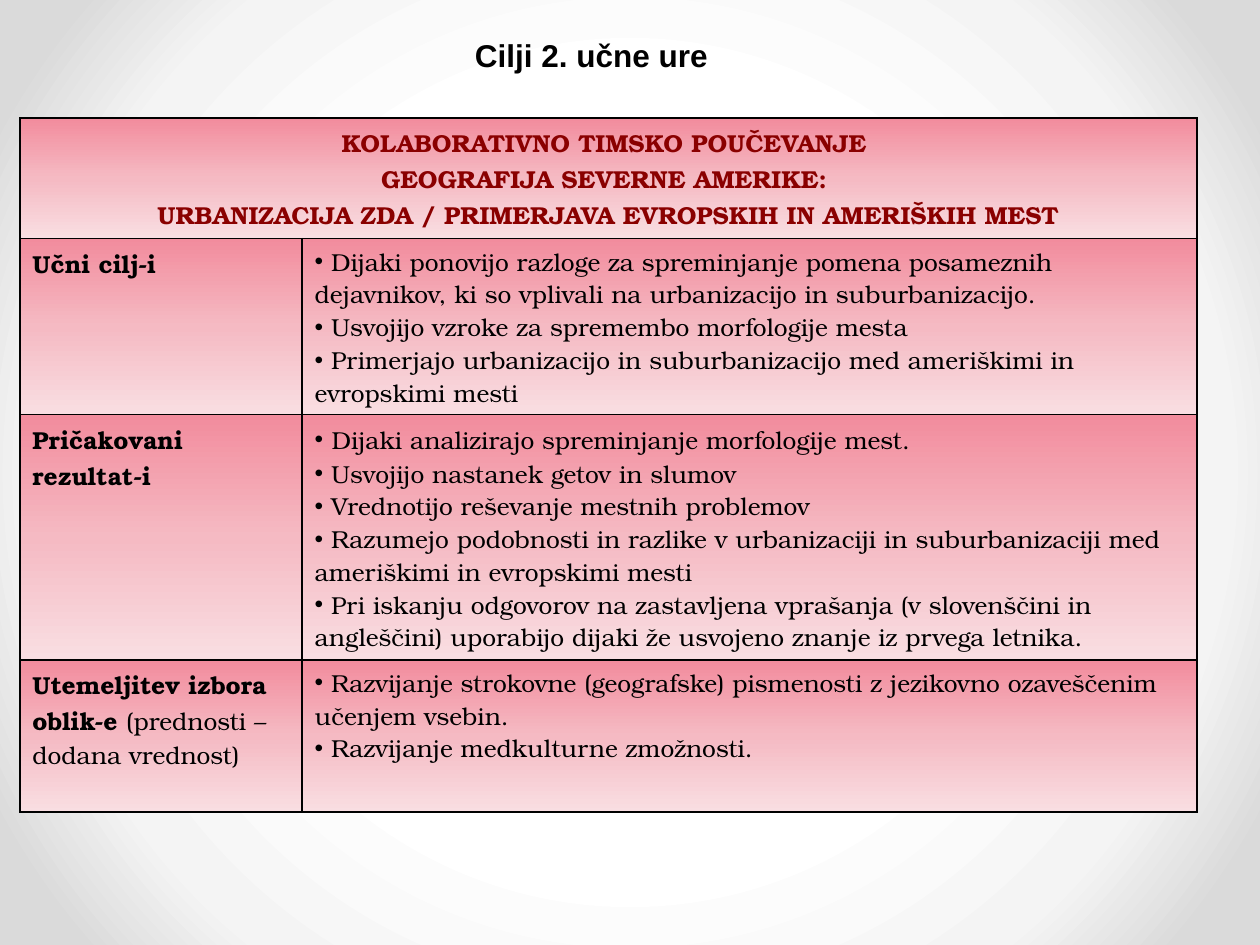
from lxml import etree
from pptx import Presentation
from pptx import util as u
from pptx.dml import color
from pptx.enum import text
from pptx.oxml import ns

HEADING = [
    "KOLABORATIVNO TIMSKO POUČEVANJE ",
    "GEOGRAFIJA SEVERNE AMERIKE: ",
    "URBANIZACIJA ZDA / PRIMERJAVA EVROPSKIH IN AMERIŠKIH MEST",
]
GOALS = [
    ([("Učni cilj-i", True)],
     [[(" Dijaki ponovijo razloge za spreminjanje pomena posameznih dejavnikov, "
        "ki so vplivali na urbanizacijo in suburbanizacijo.", False)],
      [(" Usvojijo vzroke za spremembo morfologije mesta", False)],
      [(" Primerjajo urbanizacijo in suburbanizacijo med ameriškimi in "
        "evropskimi mesti", False)]]),
    ([("Pričakovani rezultat-i", True)],
     [[(" ", True), ("Dijaki analizirajo spreminjanje morfologije mest.", False)],
      [(" Usvojijo nastanek getov in slumov", False)],
      [(" Vrednotijo reševanje mestnih problemov", False)],
      [(" Razumejo podobnosti in razlike v urbanizaciji in suburbanizaciji med "
        "ameriškimi in evropskimi mesti", False)],
      [(" Pri iskanju odgovorov na zastavljena vprašanja (v slovenščini in "
        "angleščini) uporabijo dijaki že usvojeno znanje iz prvega letnika.", False)]]),
    ([("Utemeljitev izbora oblik-e ", True), ("(prednosti – dodana vrednost)", False)],
     [[(" Razvijanje strokovne (geografske) pismenosti z jezikovno ozaveščenim "
        "učenjem vsebin.", False)],
      [(" Razvijanje medkulturne zmožnosti.", False)]]),
]
COLUMN_WIDTHS = [5.69, 18.04]
ROW_HEIGHTS = [2.43, 3.55, 4.94, 3.07]


def rgb(value):
    return color.RGBColor.from_string(value)


def child(parent, tag, **attributes):
    return etree.SubElement(parent, ns.qn(tag), attributes)


class GoalsSlide:
    black = "000000"
    heading_color = "8A0000"
    title_font = "Arial"
    table_font = "TeX Gyre Bonum"
    glow = [(50, "FFFFFF"), (76, "F4F4F4"), (92, "DADADA")]
    pink = [(0, "F28C9D"), (50, "F5BAC3"), (100, "F9DEE2")]

    def __init__(self, deck):
        self.slide = deck.slides.add_slide(deck.slide_layouts[5])

    def gradient(self, parent, stops):
        fill = child(parent, "a:gradFill", rotWithShape="1")
        stop_list = child(fill, "a:gsLst")
        for position, value in stops:
            stop = child(stop_list, "a:gs", pos=str(position * 1000))
            child(stop, "a:srgbClr", val=value)
        return fill

    def background(self):
        self.slide.background.fill.solid()
        properties = self.slide.element.find(".//" + ns.qn("p:bgPr"))
        properties.remove(properties[0])
        fill = self.gradient(properties, self.glow)
        center = child(fill, "a:path", path="circle")
        child(center, "a:fillToRect", l="50000", t="50000", r="50000", b="50000")
        properties.insert(0, fill)

    def style(self, run, font, size, value, bold):
        run.font.name = font
        run.font.size = u.Pt(size)
        run.font.color.rgb = rgb(value)
        run.font.bold = bold

    def title(self, wording, left, top, width, height):
        title = self.slide.shapes.title
        title.left, title.top = u.Cm(left), u.Cm(top)
        title.width, title.height = u.Cm(width), u.Cm(height)
        frame = title.text_frame
        frame.text = wording
        frame.word_wrap = False
        frame.auto_size = text.MSO_AUTO_SIZE.SHAPE_TO_FIT_TEXT
        frame.vertical_anchor = text.MSO_ANCHOR.TOP
        frame.paragraphs[0].alignment = text.PP_ALIGN.LEFT
        self.style(frame.paragraphs[0].runs[0], self.title_font, 18, self.black, True)

    def table(self, left, top, widths, heights):
        table = self.slide.shapes.add_table(
            len(heights), len(widths), u.Cm(left), u.Cm(top),
            u.Cm(sum(widths)), u.Cm(sum(heights))).table
        table.first_row = table.horz_banding = False
        for column, width in zip(table.columns, widths):
            column.width = u.Cm(width)
        for row, height in zip(table.rows, heights):
            row.height = u.Cm(height)
            for cell in row.cells:
                self.cell_frame(cell)
        return table

    def cell_frame(self, cell):
        properties = cell._tc.get_or_add_tcPr()
        for side in "LRTB":
            line = child(properties, "a:ln" + side, w=str(u.Pt(1)))
            child(child(line, "a:solidFill"), "a:srgbClr", val=self.black)
        fill = self.gradient(properties, self.pink)
        child(fill, "a:lin", ang="5400000", scaled="0")

    def cell_text(self, cell, paragraphs, value=black, align=None, bullet=False):
        frame = cell.text_frame
        for index, parts in enumerate(paragraphs):
            paragraph = frame.add_paragraph() if index else frame.paragraphs[0]
            if bullet:
                properties = paragraph._p.get_or_add_pPr()
                properties.set("marL", "0")
                properties.set("indent", "0")
                child(properties, "a:buFont", typeface="Arial")
                child(properties, "a:buChar", char="•")
            paragraph.alignment = align
            for wording, bold in parts:
                run = paragraph.add_run()
                run.text = wording
                self.style(run, self.table_font, 14, value, bold)


def main():
    deck = Presentation()
    deck.slide_width, deck.slide_height = u.Cm(25.4), u.Cm(19.05)
    page = GoalsSlide(deck)
    page.background()
    page.title("Cilji 2. učne ure", 9.32, 0.6, 5.26, 1.02)

    table = page.table(0.4, 2.38, COLUMN_WIDTHS, ROW_HEIGHTS)
    heading = table.cell(0, 0)
    heading.merge(table.cell(0, 1))
    page.cell_text(heading, [[(line, True)] for line in HEADING],
                   page.heading_color, text.PP_ALIGN.CENTER)
    for row, (label, goals) in enumerate(GOALS, 1):
        page.cell_text(table.cell(row, 0), [label])
        page.cell_text(table.cell(row, 1), goals, bullet=True)
    deck.save("out.pptx")


if __name__ == "__main__":
    main()
